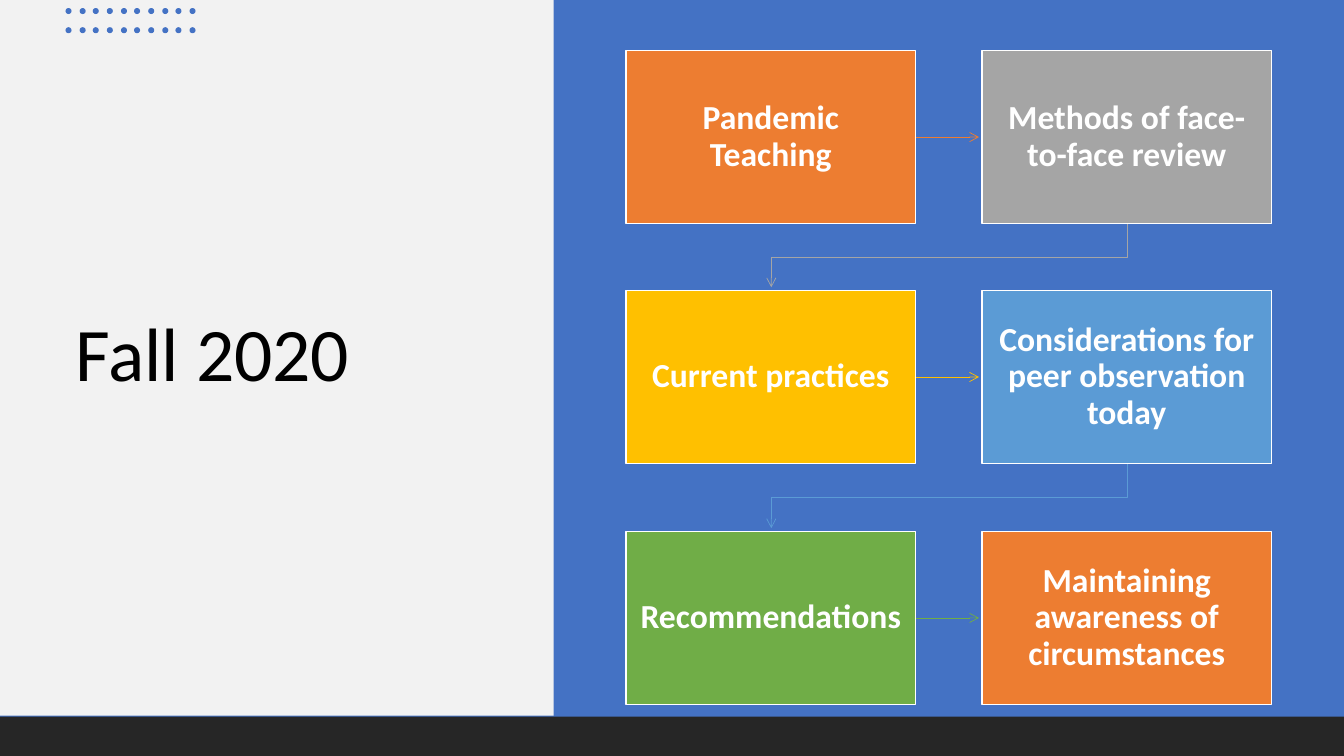
from lxml.etree import SubElement
from pptx import Presentation
from pptx.dml.color import RGBColor
from pptx.enum.shapes import MSO_CONNECTOR, MSO_SHAPE
from pptx.enum.text import MSO_ANCHOR, PP_ALIGN
from pptx.oxml.ns import qn
from pptx.util import Emu, Pt

PX = 9144
BLACK = RGBColor(0x00, 0x00, 0x00)
WHITE = RGBColor(0xFF, 0xFF, 0xFF)
LIGHT = RGBColor(0xF2, 0xF2, 0xF2)
DARK = RGBColor(0x26, 0x26, 0x26)
BLUE = RGBColor(0x44, 0x72, 0xC4)
ORANGE = RGBColor(0xED, 0x7D, 0x31)
GRAY = RGBColor(0xA5, 0xA5, 0xA5)
YELLOW = RGBColor(0xFF, 0xC0, 0x00)
SKY = RGBColor(0x5B, 0x9B, 0xD5)
GREEN = RGBColor(0x70, 0xAD, 0x47)

TOPICS = [
    ("Pandemic Teaching", ORANGE),
    ("Methods of face-to-face review", GRAY),
    ("Current practices", YELLOW),
    ("Considerations for peer observation today", SKY),
    ("Recommendations", GREEN),
    ("Maintaining awareness of circumstances", ORANGE),
]
BOX_WIDTH, BOX_HEIGHT = 287, 172
COLUMNS = [621, 974]
ROWS = [50 + round(row * 238.5) for row in range(3)]


def px(*values):
    return [Emu(value * PX) for value in values]


def assign(target, values):
    for name, value in values.items():
        setattr(target, name, value)


class SlideBuilder:
    title_font = {"name": "Calibri", "size": Pt(54)}
    box_font = {"name": "Calibri", "size": Pt(24), "bold": True}

    def __init__(self, slide):
        self.slide = slide

    def shape(self, kind, box, fill, outline=None):
        shape = self.slide.shapes.add_shape(kind, *px(*box))
        shape.shadow.inherit = False
        shape.fill.solid()
        shape.fill.fore_color.rgb = fill
        if outline is None:
            shape.line.fill.background()
        else:
            shape.line.color.rgb = outline
            shape.line.width = Pt(1)
        return shape

    def fill_text(self, shape, text, font, color, align, margins):
        frame = shape.text_frame
        left, top = px(*margins)
        assign(frame, {
            "word_wrap": True, "vertical_anchor": MSO_ANCHOR.MIDDLE,
            "margin_left": left, "margin_right": left,
            "margin_top": top, "margin_bottom": top,
        })
        paragraph = frame.paragraphs[0]
        assign(paragraph, {"alignment": align, "line_spacing": 0.9})
        run = paragraph.add_run()
        run.text = text
        assign(run.font, font)
        run.font.color.rgb = color

    def title(self, text, box):
        shape = self.slide.shapes.add_textbox(*px(*box))
        self.fill_text(shape, text, self.title_font, BLACK, PP_ALIGN.LEFT, (10, 5))

    def topic(self, text, box, fill):
        shape = self.shape(MSO_SHAPE.RECTANGLE, box, fill, WHITE)
        self.fill_text(shape, text, self.box_font, WHITE, PP_ALIGN.CENTER, (14, 15))

    def arrow_style(self, arrow, color):
        arrow.line.color.rgb = color
        arrow.line.width = Pt(0.5)
        outline = arrow._element.spPr.find(qn("a:ln"))
        SubElement(outline, qn("a:tailEnd"), type="arrow")

    def straight_arrow(self, start, end, color):
        arrow = self.slide.shapes.add_connector(
            MSO_CONNECTOR.STRAIGHT, *px(*start, *end))
        self.arrow_style(arrow, color)
        SubElement(arrow._element.spPr, qn("a:effectLst"))

    def bent_arrow(self, points, color):
        outline = self.slide.shapes.build_freeform(*points[0], scale=PX)
        outline.add_line_segments(points[1:], close=False)
        arrow = outline.convert_to_shape()
        arrow.shadow.inherit = False
        arrow.fill.background()
        self.arrow_style(arrow, color)


def main():
    presentation = Presentation()
    presentation.slide_width, presentation.slide_height = px(1333, 750)
    slide = presentation.slides.add_slide(presentation.slide_layouts[6])
    builder = SlideBuilder(slide)

    builder.shape(MSO_SHAPE.RECTANGLE, (0, 0, 1333, 750), BLUE)
    builder.shape(MSO_SHAPE.RECTANGLE, (0, 0, 549, 710), LIGHT)
    builder.title("Fall 2020", (65, 132, 424, 445))
    for column in range(10):
        for top in (8, 27):
            left = 65 + round(column * 13.67)
            builder.shape(MSO_SHAPE.OVAL, (left, top, 6, 6), BLUE)
    builder.shape(MSO_SHAPE.RECTANGLE, (0, 711, 1333, 39), DARK)

    left_center, right_center = [left + BOX_WIDTH // 2 + 1 for left in COLUMNS]
    for index, (text, color) in enumerate(TOPICS):
        row, column = divmod(index, 2)
        left, top = COLUMNS[column], ROWS[row]
        bottom = top + BOX_HEIGHT
        if column == 0:
            middle = top + BOX_HEIGHT // 2
            builder.straight_arrow(
                (left + BOX_WIDTH, middle), (COLUMNS[1] - 3, middle), color)
        elif row + 1 < len(ROWS):
            bend = (bottom + ROWS[row + 1]) // 2
            builder.bent_arrow([
                (right_center, bottom), (right_center, bend),
                (left_center, bend), (left_center, ROWS[row + 1] - 3),
            ], color)
        builder.topic(text, (left, top, BOX_WIDTH, BOX_HEIGHT), color)

    presentation.save("out.pptx")


if __name__ == "__main__":
    main()
